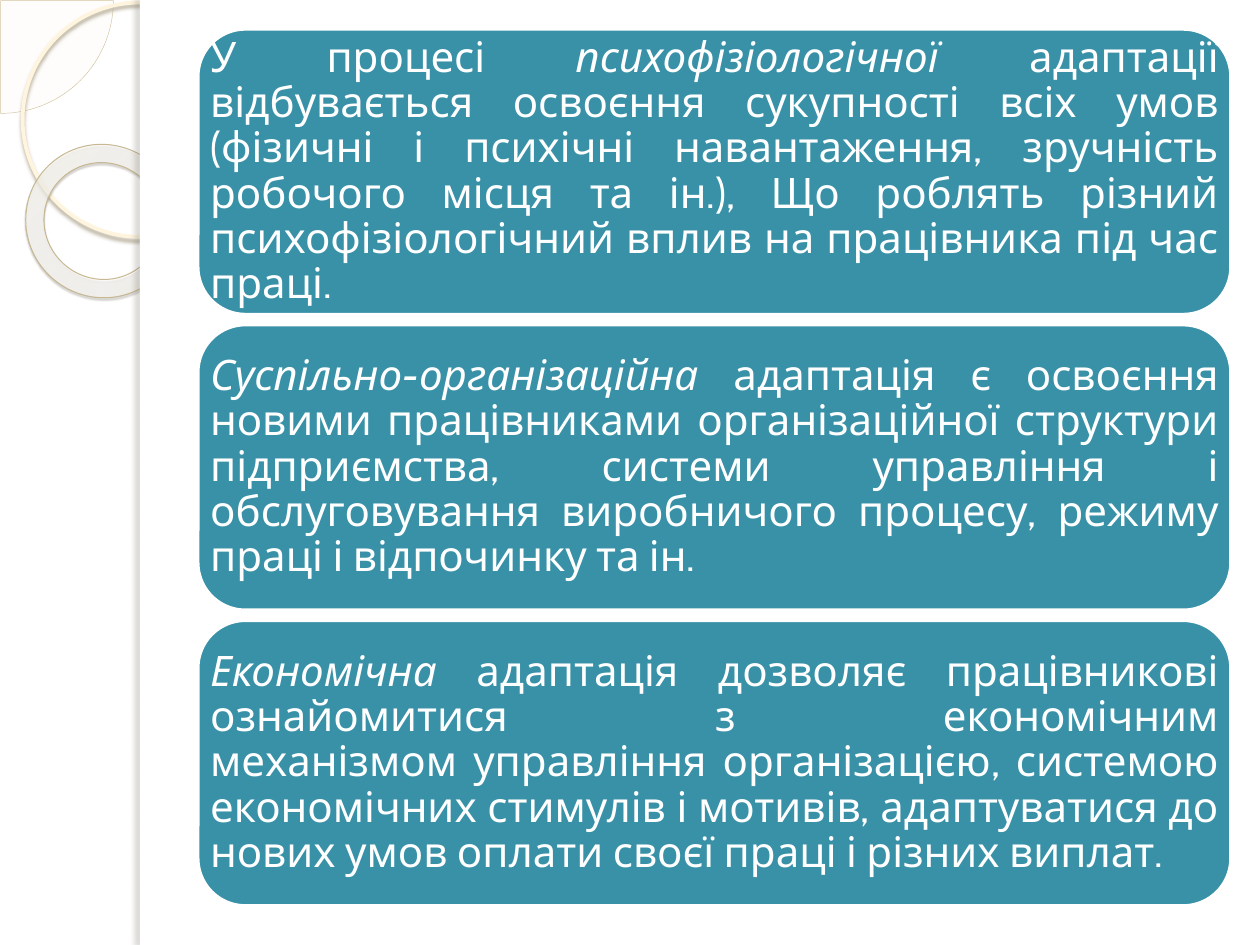
import pptx
import pptx.util
import pptx.dml.color
import pptx.enum.shapes
import pptx.enum.text
import pptx.oxml
import pptx.oxml.ns
from dataclasses import dataclass

Inches = pptx.util.Inches
Pt = pptx.util.Pt
Shape = pptx.enum.shapes.MSO_SHAPE
qn = pptx.oxml.ns.qn
NS = 'xmlns:a="http://schemas.openxmlformats.org/drawingml/2006/main"'


@dataclass(frozen=True)
class Theme:
    font: str = "Cabin"
    size: int = 24
    white: str = "FFFFFF"
    card: str = "3891A7"
    pie: str = "FEFAF4"
    pie_line: str = "D3C39F"
    ring_line: str = "FFF5DE"
    donut_line: str = "C7B893"
    donut: tuple = ((0, "FFFCF6", 70), (70, "FFFEFB", 55), (100, "F0D28E", 60))
    ring_shade: str = "B0A68F"
    donut_shade: str = "5A5444"
    edge_shade: str = "736F63"


THEME = Theme()

# Each card: runs of (text, italic); a newline is a line break
CARDS = [
    [("У процесі ", False), ("психофізіологічної ", True),
     ("адаптації відбувається освоєння сукупності всіх умов (фізичні і "
      "психічні навантаження, зручність робочого місця та ін.), Що роблять "
      "різний психофізіологічний вплив на працівника під час праці.", False)],
    [("Суспільно-організаційна ", True),
     ("адаптація є освоєння новими працівниками організаційної структури "
      "підприємства, системи управління і обслуговування виробничого "
      "процесу, режиму праці і відпочинку та ін.", False)],
    [("Економічна ", True),
     ("адаптація дозволяє працівникові ознайомитися з економічним\n"
      "механізмом управління організацією, системою економічних стимулів і "
      "мотивів, адаптуватися до нових умов оплати своєї праці і різних "
      "виплат.", False)],
]


def rgb(code):
    return pptx.dml.color.RGBColor.from_string(code)


def tint(code, alpha):
    return (f'<a:srgbClr val="{code}"><a:alpha val="{alpha * 1000}"/>'
            '</a:srgbClr>')


def draw(shapes, kind, box, fill=None, line=None, width=0):
    shape = shapes.add_shape(kind, *map(Inches, box))
    shape.shadow.inherit = False
    if fill:
        shape.fill.solid()
        shape.fill.fore_color.rgb = rgb(fill)
    else:
        shape.fill.background()
    if line:
        shape.line.color.rgb = rgb(line)
        shape.line.width = Pt(width)
    else:
        shape.line.fill.background()
    return shape


def shade(shape, code, alpha, blur, dist, angle):
    """Give the shape an outer shadow."""
    effects = shape._element.spPr.find(qn("a:effectLst"))
    effects.append(pptx.oxml.parse_xml(
        f'<a:outerShdw {NS} blurRad="{Pt(blur)}" dist="{Pt(dist)}" '
        f'dir="{angle * 60000}" algn="tl" rotWithShape="0">'
        f'{tint(code, alpha)}</a:outerShdw>'))


def glow(shape, stops):
    """Fill the shape with a circular gradient of see-through stops."""
    marks = "".join(f'<a:gs pos="{pos * 1000}">{tint(code, alpha)}</a:gs>'
                    for pos, code, alpha in stops)
    props = shape._element.spPr
    props.replace(props.find(qn("a:noFill")), pptx.oxml.parse_xml(
        f'<a:gradFill {NS} rotWithShape="1"><a:gsLst>{marks}</a:gsLst>'
        '<a:path path="circle"><a:fillToRect l="-408000" t="-50000" '
        'r="508000" b="150000"/></a:path></a:gradFill>'))


def add_side(shapes, box):
    """Draw the rings of the left band, then the page that covers them."""
    left, top, width, height = box
    pie = draw(shapes, Shape.PIE, (left - 0.89, top - 0.89, 1.79, 1.79),
               THEME.pie, THEME.pie_line, 0.25)
    pie.adjustments[0] = 0
    pie.adjustments[1] = 54.02
    color = pie._element.spPr.find(qn("a:solidFill"))[0]
    color.append(pptx.oxml.parse_xml(f'<a:alpha {NS} val="33000"/>'))

    ring = draw(shapes, Shape.OVAL, (left + 0.18, top + 0.02, 1.86, 1.86),
                None, THEME.ring_line, 2.15)
    shade(ring, THEME.ring_shade, 85, 2, 2, 90)

    donut = draw(shapes, Shape.DONUT, (left + 0.2, top + 1.15, 1.23, 1.21),
                 None, THEME.donut_line, 0.58)
    donut.adjustments[0] = 0.12
    donut.rotation = 38.6
    glow(donut, THEME.donut)
    shade(donut, THEME.donut_shade, 35, 1, 1.2, 75)

    edge = left + width
    draw(shapes, Shape.RECTANGLE, (edge, top, 10 - edge, height), THEME.white)
    strip = draw(shapes, Shape.RECTANGLE, (edge, top, 0.08, height),
                 THEME.white)
    shade(strip, THEME.edge_shade, 25, 3, 3, 180)


def add_card(shapes, box, runs):
    draw(shapes, Shape.ROUNDED_RECTANGLE, box, THEME.card, THEME.white, 2)
    frame = shapes.add_textbox(*map(Inches, box)).text_frame
    frame.word_wrap = True
    frame.vertical_anchor = pptx.enum.text.MSO_ANCHOR.MIDDLE
    frame.margin_left = frame.margin_right = Inches(0.1)
    frame.margin_top = frame.margin_bottom = Inches(0.1)
    para = frame.paragraphs[0]
    para.alignment = pptx.enum.text.PP_ALIGN.JUSTIFY
    para.line_spacing = 0.9
    para.font.name = THEME.font
    para.font.size = Pt(THEME.size)
    para.font.color.rgb = rgb(THEME.white)
    for text, slant in runs:
        for row, part in enumerate(text.split("\n")):
            if row:
                para.add_line_break()
            run = para.add_run()
            run.text = part
            run.font.italic = slant


def add_cards(shapes, box, cards, gap):
    """Stack the cards in the box with equal gaps."""
    left, top, width, height = box
    tall = (height - gap * (len(cards) - 1)) / len(cards)
    group = shapes.add_group_shape()
    for row, runs in enumerate(cards):
        spot = (left, top + row * (tall + gap), width, tall)
        add_card(group.shapes, spot, runs)


def main():
    deck = pptx.Presentation()
    deck.slide_width = Inches(10)
    deck.slide_height = Inches(7.5)
    slide = deck.slides.add_slide(deck.slide_layouts[6])
    add_side(slide.shapes, (0, 0, 1.11, 7.5))
    add_cards(slide.shapes, (1.57, 0.23, 8.2, 6.96), CARDS, 0.08)
    deck.save("out.pptx")


if __name__ == "__main__":
    main()
